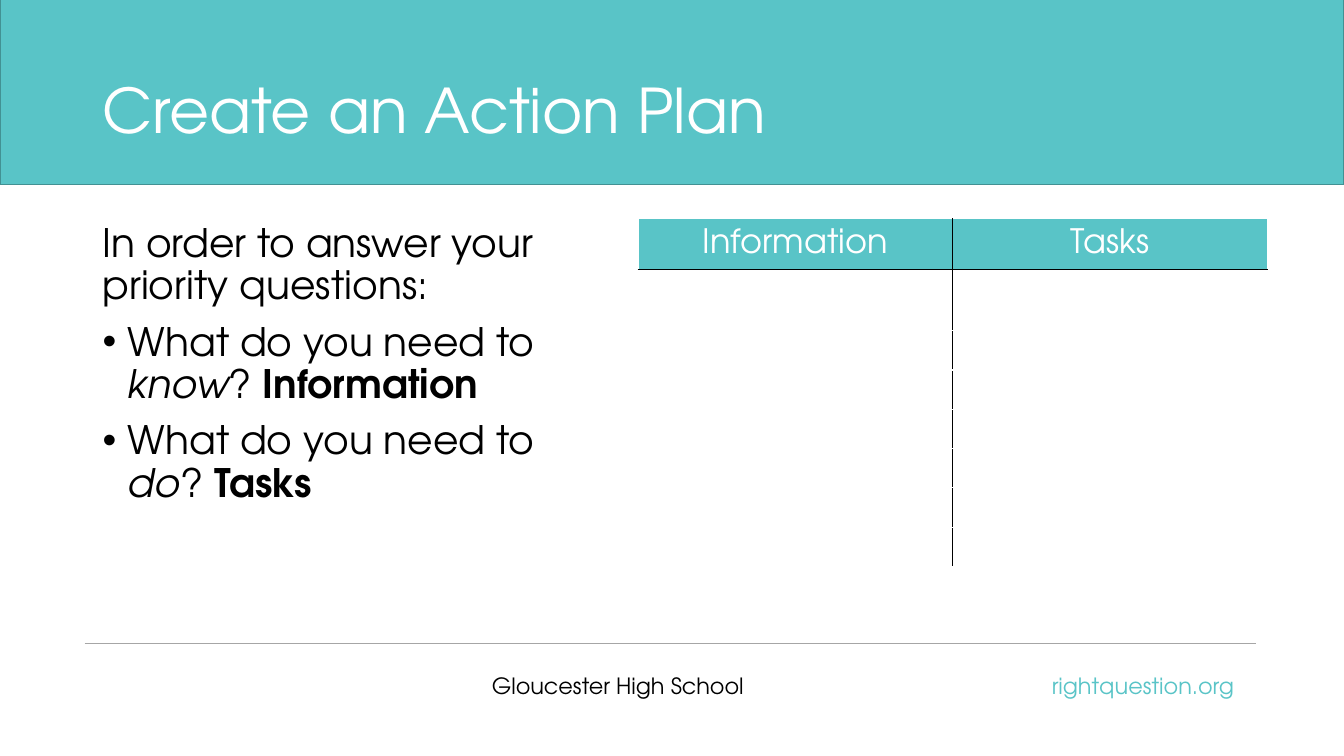
import pptx
import pptx.dml.color
import pptx.enum.shapes
import pptx.enum.text
import pptx.oxml
import pptx.oxml.ns
import pptx.util
from lxml import etree

Inches = pptx.util.Inches
Pt = pptx.util.Pt
RGBColor = pptx.dml.color.RGBColor
Align = pptx.enum.text.PP_ALIGN
Anchor = pptx.enum.text.MSO_ANCHOR

TEAL = RGBColor(0x59, 0xC4, 0xC7)
EDGE = RGBColor(0x42, 0x91, 0x93)
GRAY = RGBColor(0xA6, 0xA6, 0xA6)
BLACK = RGBColor(0, 0, 0)
WHITE = RGBColor(0xFF, 0xFF, 0xFF)


def tag(name):
    return pptx.oxml.ns.qn("a:" + name)


class Deck:
    font = "TeX Gyre Adventor"

    def __init__(self):
        self.show = pptx.Presentation()
        self.show.slide_width = Inches(13.33)
        self.show.slide_height = Inches(7.5)
        self.slide = self.show.slides.add_slide(self.show.slide_layouts[6])
        self.shapes = self.slide.shapes

    def style(self, run, size, color):
        run.font.name = self.font
        run.font.size = Pt(size)
        run.font.color.rgb = color

    def band(self, x, y, w, h):
        kind = pptx.enum.shapes.MSO_SHAPE.RECTANGLE
        box = self.shapes.add_shape(kind, Inches(x), Inches(y), Inches(w), Inches(h))
        box.shadow.inherit = False
        box.fill.solid()
        box.fill.fore_color.rgb = TEAL
        box.line.color.rgb = EDGE
        box.line.width = Pt(1)

    def rule(self, left, right, y):
        kind = pptx.enum.shapes.MSO_CONNECTOR.STRAIGHT
        line = self.shapes.add_connector(
            kind, Inches(left), Inches(y), Inches(right), Inches(y))
        line.line.color.rgb = GRAY
        line.line.width = Pt(0.5)
        etree.SubElement(line._element.spPr, tag("effectLst"))

    def text(self, x, y, w, h, paras, size, color, align=Align.LEFT, anchor=Anchor.TOP):
        """Each paragraph is a list of (text, mark) runs, mark being "", "i" or "b".

        Paragraphs after the first are bulleted.
        """
        box = self.shapes.add_textbox(Inches(x), Inches(y), Inches(w), Inches(h))
        frame = box.text_frame
        frame.word_wrap = True
        frame.vertical_anchor = anchor
        for i, runs in enumerate(paras):
            para = frame.add_paragraph() if i else frame.paragraphs[0]
            if i:
                self.bullet(para)
                para.space_before = Pt(10)
            para.alignment = align
            para.line_spacing = 0.9
            for words, mark in runs:
                run = para.add_run()
                run.text = words
                self.style(run, size, color)
                run.font.italic = mark == "i"
                run.font.bold = mark == "b"

    def bullet(self, para):
        props = para._p.get_or_add_pPr()
        props.set("marL", str(Inches(0.25)))
        props.set("indent", str(-Inches(0.25)))
        etree.SubElement(props, tag("buFont"), typeface="Arial")
        etree.SubElement(props, tag("buChar"), char="•")

    def border(self, cell, side, color):
        props = cell._tc.get_or_add_tcPr()
        line = etree.SubElement(props, tag("ln" + side), w=str(Pt(1)))
        fill = etree.SubElement(line, tag("solidFill"))
        etree.SubElement(fill, tag("srgbClr"), val=str(color))

    def table(self, x, y, width, heads, rows):
        """Draw a T-chart: a filled header row above empty rows."""
        shape = self.shapes.add_table(
            len(rows), len(heads), Inches(x), Inches(y), Inches(width), Inches(sum(rows)))
        grid = shape.table
        for col in grid.columns:
            col.width = Inches(width / len(heads))
        for r, high in enumerate(rows):
            grid.rows[r].height = Inches(high)
            for c, head in enumerate(heads):
                cell = grid.cell(r, c)
                inner = {"R"} if c == 0 else {"L"}
                inner |= {"B"} if r == 0 else {"T"} if r == 1 else set()
                for side in "LRTB":
                    self.border(cell, side, BLACK if side in inner else WHITE)
                if r == 0:
                    cell.fill.solid()
                    cell.fill.fore_color.rgb = TEAL
                    self.head(cell, head)
                else:
                    cell.fill.background()
                    cell.margin_top = cell.margin_bottom = 0

    def head(self, cell, words):
        cell.vertical_anchor = Anchor.MIDDLE
        para = cell.text_frame.paragraphs[0]
        para.text = words
        para.alignment = Align.CENTER
        self.style(para.runs[0], 24, WHITE)
        para.runs[0].font.bold = False


def main():
    deck = Deck()
    deck.band(0, -0.02, 13.33, 1.85)
    deck.text(4.78, 6.65, 3.01, 0.67, [[("Gloucester High School", "")]], 16, BLACK)
    deck.text(9.33, 6.65, 3.01, 0.67, [[("rightquestion.org", "")]], 16, TEAL, Align.RIGHT)
    deck.rule(0.84, 12.46, 6.38)
    ask = "What do you need to "
    deck.text(0.92, 2.17, 5.26, 4.53, [
        [("In order to answer your priority questions:", "")],
        [(ask, ""), ("know", "i"), ("? ", ""), ("Information", "b")],
        [(ask, ""), ("do", "i"), ("? ", ""), ("Tasks", "b")],
    ], 28, BLACK)
    deck.text(0.92, 0.4, 11.5, 1.45, [[("Create an Action Plan", "")]], 44, WHITE,
              anchor=Anchor.MIDDLE)
    deck.table(6.33, 2.17, 6.24, ["Information", "Tasks"], [0.48, 0.61] + [0.39] * 6)
    deck.show.save("out.pptx")


if __name__ == "__main__":
    main()
